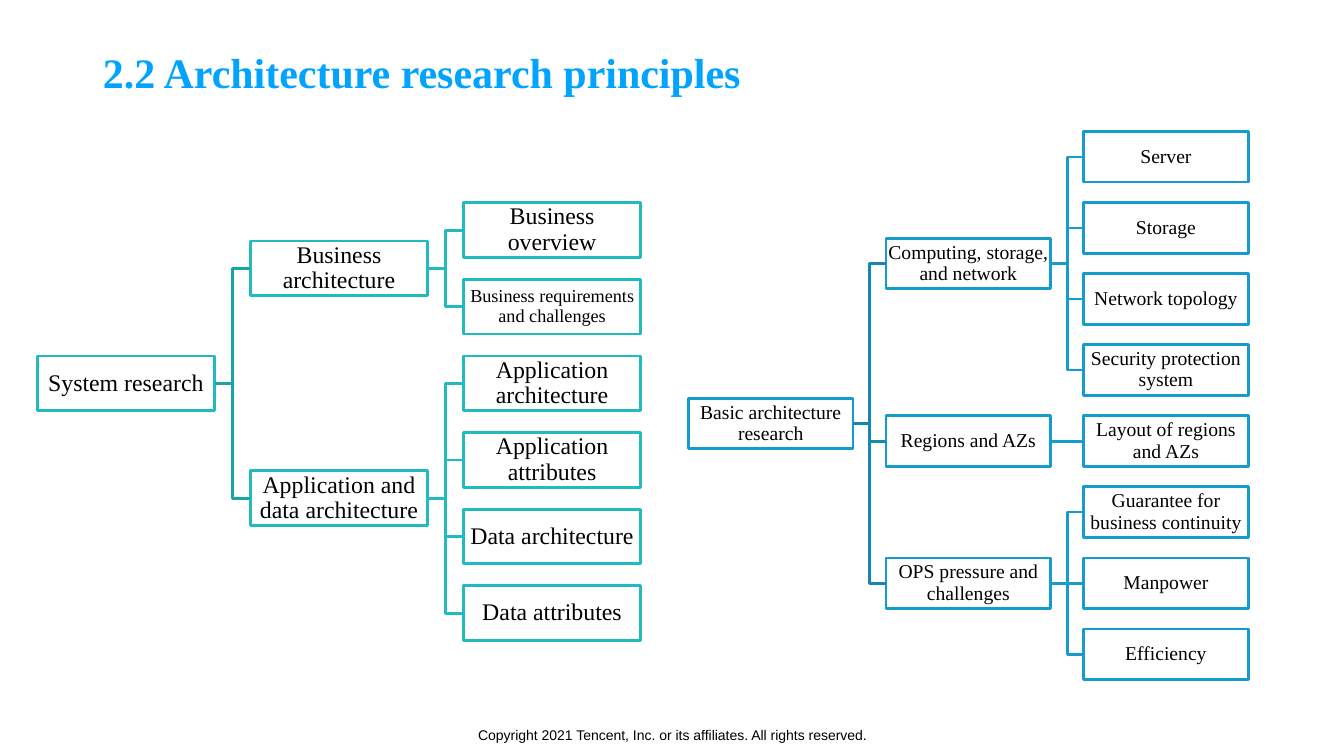
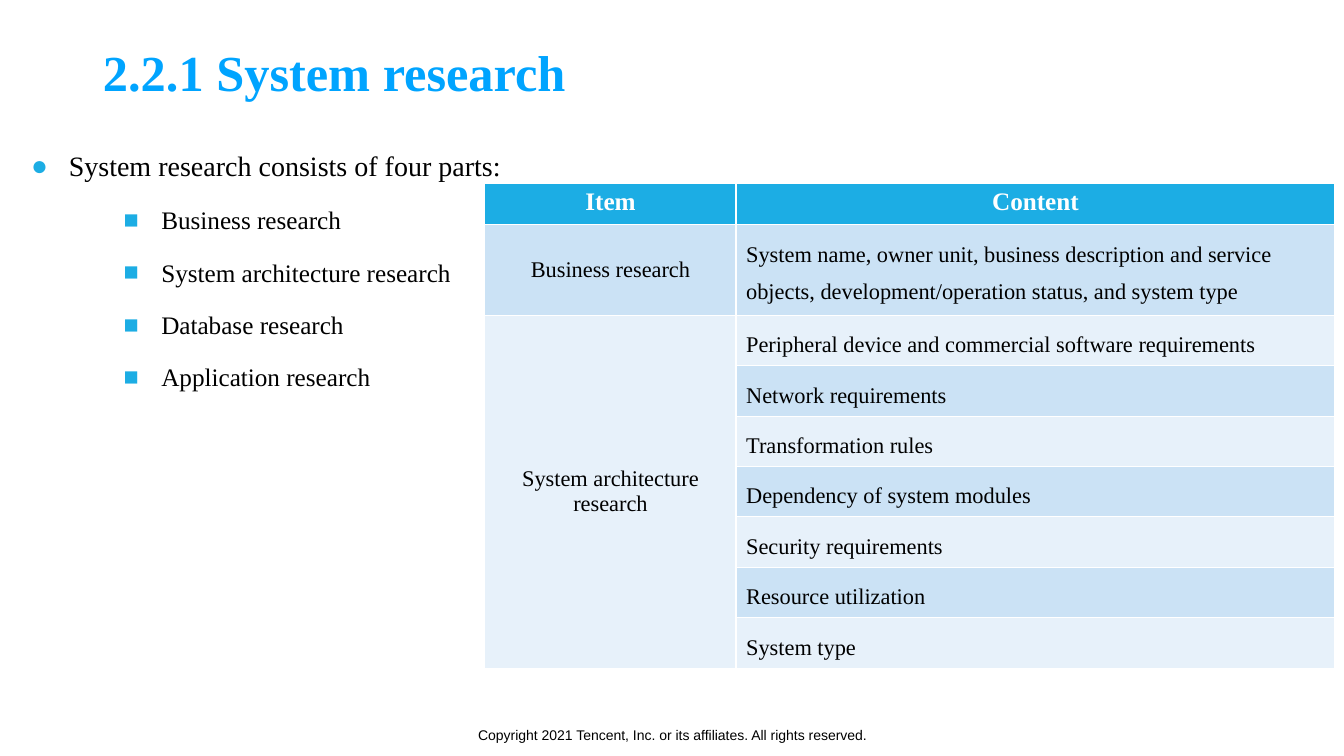
from dataclasses import dataclass

from lxml import etree
from pptx import Presentation
from pptx.dml.color import RGBColor
from pptx.enum import shapes, text
from pptx.oxml.ns import qn
from pptx.util import Cm, Pt


@dataclass(frozen=True)
class Theme:
    title: str = "00A4FF"
    accent: str = "1CADE4"
    band_dark: str = "CBE2F5"
    band_light: str = "E7F1FA"
    teal: str = "21BAC1"
    teal_dark: str = "1BA3AA"
    blue: str = "169BCE"
    blue_dark: str = "1488B3"
    ink: str = "000000"
    white: str = "FFFFFF"
    serif: str = "Times New Roman"
    sans: str = "Arial"
    title_size: int = 36
    long_title_size: int = 30
    list_size: int = 20
    sublist_size: int = 18
    header_size: int = 18
    cell_size: int = 16
    footer_size: int = 10


T = Theme()
rgb = RGBColor.from_string
LEFT, CENTER = text.PP_ALIGN.LEFT, text.PP_ALIGN.CENTER
MIDDLE = text.MSO_ANCHOR.MIDDLE


def write(tf, content, size, color=T.ink, font=T.serif, bold=False, align=LEFT,
          spacing=1.0, before=0, level=0, bullet=None, indent=0, hang=0):
    """Fill the empty first paragraph of tf, or add a paragraph; indents in cm."""
    p = tf.paragraphs[0]
    if p.runs:
        p = tf.add_paragraph()
    p.level = level
    if bullet:
        pPr = p._p.get_or_add_pPr()
        pPr.set("marL", str(Cm(indent)))
        pPr.set("indent", str(-Cm(hang)))
        clr = etree.SubElement(pPr, qn("a:buClr"))
        etree.SubElement(clr, qn("a:srgbClr"), val=T.accent)
        etree.SubElement(pPr, qn("a:buFont"), typeface=T.sans)
        etree.SubElement(pPr, qn("a:buChar"), char=bullet)
    p.alignment, p.line_spacing, p.space_before = align, spacing, Pt(before)
    r = p.add_run()
    r.text = content
    r.font.size, r.font.name, r.font.bold = Pt(size), font, bold
    r.font.color.rgb = rgb(color)


def add_slide(prs, layout, title, size):
    """Add a slide with the shared title style and footer."""
    s = prs.slides.add_slide(prs.slide_layouts[layout])
    sp = s.shapes.title
    sp.left, sp.top, sp.width, sp.height = Cm(2.34), Cm(0.64), Cm(27.28), Cm(2.51)
    tf = sp.text_frame
    tf.vertical_anchor, tf.auto_size = MIDDLE, text.MSO_AUTO_SIZE.NONE
    write(tf, title, size, color=T.title, bold=True, spacing=0.9)
    tf = s.shapes.add_textbox(Cm(10.34), Cm(18.01), Cm(13.21), Cm(1.02)).text_frame
    tf.word_wrap, tf.vertical_anchor = True, MIDDLE
    write(tf, "Copyright 2021 Tencent, Inc. or its affiliates. All rights reserved.",
          T.footer_size, font=T.sans, align=CENTER)
    return s


prs = Presentation()
prs.slide_width, prs.slide_height = Cm(33.87), Cm(19.05)

# Architecture research: two trees
s = add_slide(prs, 5, "2.2 Architecture research principles", T.long_title_size)
trees = [
    dict(root="Basic architecture research", left=17.35, top=3.32, width=4.15, height=1.27,
         col_step=4.98, row_step=1.79, size=14, color=T.blue, root_color=T.blue_dark,
         branches={
             "Computing, storage, and network": [
                 "Server", "Storage", "Network topology", "Security protection system"],
             "Regions and AZs": ["Layout of regions and AZs"],
             "OPS pressure and challenges": [
                 "Guarantee for business continuity", "Manpower", "Efficiency"]}),
    dict(root="System research", left=0.94, top=5.11, width=4.47, height=1.38,
         col_step=5.37, row_step=1.93, size=17, color=T.teal, root_color=T.teal_dark,
         branches={
             "Business architecture": [
                 "Business overview", "Business requirements and challenges"],
             "Application and data architecture": [
                 "Application architecture", "Application attributes",
                 "Data architecture", "Data attributes"]}),
]
small_labels = {"Business requirements and challenges": 13}

for tree in trees:
    # Each parent sits halfway between its first and last child
    nodes, links, branch_rows, row = {}, [], [], 0
    for branch, leaves in tree["branches"].items():
        for i, leaf in enumerate(leaves):
            nodes[leaf] = (2, row + i)
            links.append((branch, leaf, tree["color"]))
        nodes[branch] = (1, row + (len(leaves) - 1) / 2)
        branch_rows.append(nodes[branch][1])
        links.append((tree["root"], branch, tree["root_color"]))
        row += len(leaves)
    nodes[tree["root"]] = (0, (branch_rows[0] + branch_rows[-1]) / 2)

    boxes = {}
    for label, (col, row) in nodes.items():
        sp = s.shapes.add_shape(
            shapes.MSO_SHAPE.RECTANGLE,
            Cm(tree["left"] + col * tree["col_step"]), Cm(tree["top"] + row * tree["row_step"]),
            Cm(tree["width"]), Cm(tree["height"]))
        sp.shadow.inherit = False
        sp.fill.solid()
        sp.fill.fore_color.rgb = rgb(T.white)
        sp.line.color.rgb, sp.line.width = rgb(tree["color"]), Pt(2)
        tf = sp.text_frame
        tf.word_wrap, tf.vertical_anchor = True, MIDDLE
        tf.margin_left = tf.margin_right = tf.margin_top = tf.margin_bottom = Cm(0.03)
        write(tf, label, small_labels.get(label, tree["size"]), align=CENTER, spacing=0.9)
        boxes[label] = sp

    for parent, child, color in links:
        level = nodes[parent][1] == nodes[child][1]
        kind = shapes.MSO_CONNECTOR.STRAIGHT if level else shapes.MSO_CONNECTOR.ELBOW
        line = s.shapes.add_connector(kind, 0, 0, 0, 0)
        line.begin_connect(boxes[parent], 3)
        line.end_connect(boxes[child], 1)
        line.line.color.rgb, line.line.width = rgb(color), Pt(2)
        etree.SubElement(line._element.spPr, qn("a:effectLst"))

# System research: list and table
s = add_slide(prs, 1, "2.2.1 System research", T.title_size)
sp = s.placeholders[1]
sp.left, sp.top, sp.width, sp.height = Cm(0.53), Cm(3.2), Cm(29.62), Cm(14)
tf = sp.text_frame
tf.auto_size = text.MSO_AUTO_SIZE.NONE
write(tf, "System research consists of four parts:", T.list_size, spacing=1.5,
      bullet="●", indent=0.95, hang=0.95)
for part in ["Business research", "System architecture research",
             "Database research", "Application research"]:
    write(tf, part, T.sublist_size, spacing=1.5, before=5, level=1,
          bullet="■", indent=3.28, hang=0.95)

rows = [
    ("Item", "Content"),
    ("Business research", "System name, owner unit, business description and service objects, "
                          "development/operation status, and system type"),
    ("System architecture research", "Peripheral device and commercial software requirements"),
    ("", "Network requirements"),
    ("", "Transformation rules"),
    ("", "Dependency of system modules"),
    ("", "Security requirements"),
    ("", "Resource utilization"),
    ("", "System type"),
]
widths, row_height = (6.33, 15.09), 1.04
table = s.shapes.add_table(len(rows), 2, Cm(12.22), Cm(4.62), Cm(sum(widths)),
                           Cm(row_height * len(rows))).table
for column, width in zip(table.columns, widths):
    column.width = Cm(width)
for i, row in enumerate(rows):
    table.rows[i].height = Cm(row_height)
    for j, content in enumerate(row):
        cell = table.cell(i, j)
        cell.fill.solid()
        band = T.band_dark if i % 2 else T.band_light
        cell.fill.fore_color.rgb = rgb(band if i else T.accent)
        if i == 0:
            write(cell.text_frame, content, T.header_size, color=T.white, bold=True, align=CENTER)
        elif j == 1:
            write(cell.text_frame, content, T.cell_size, spacing=1.5)
        elif content:
            cell.vertical_anchor = MIDDLE
            write(cell.text_frame, content, T.cell_size, align=CENTER)
table.cell(2, 0).merge(table.cell(len(rows) - 1, 0))

prs.save("out.pptx")
